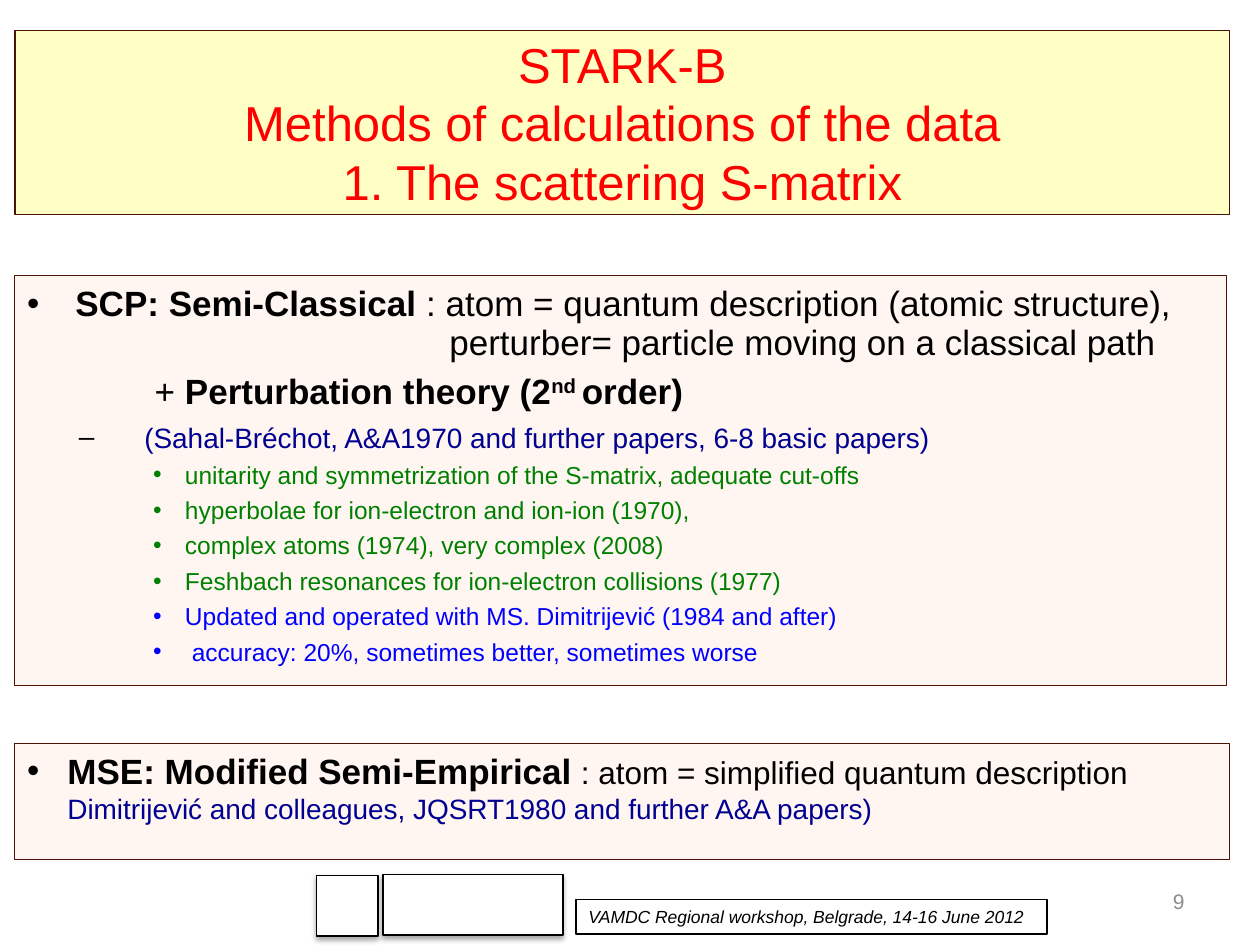
from copy import deepcopy

from lxml import etree
from pptx import Presentation
from pptx import util as u
from pptx.dml.color import RGBColor
from pptx.enum import shapes, text
from pptx.oxml import ns

COLORS = {
    "black": "000000", "white": "FFFFFF", "red": "FF0000", "navy": "000090",
    "green": "008000", "blue": "0000FF", "gray": "8C8C8C",
    "border": "4C1304", "yellow": "FFFFC5", "cream": "FFF6F2",
}
FONT = "Arial"


def rgb(name):
    return RGBColor.from_string(COLORS[name])


def paint(shape, fill, line):
    shape.fill.solid()
    shape.fill.fore_color.rgb = rgb(fill)
    shape.line.color.rgb = rgb(line)
    shape.line.width = u.Pt(0.75)


def place(shape, left, top, width, height):
    shape.left, shape.top = u.Cm(left), u.Cm(top)
    shape.width, shape.height = u.Cm(width), u.Cm(height)


def add_box(slide, place_at, fill, line):
    shape = slide.shapes.add_shape(
        shapes.MSO_SHAPE.RECTANGLE, *(u.Cm(length) for length in place_at))
    shape.shadow.inherit = False
    paint(shape, fill, line)
    shape.text_frame.vertical_anchor = text.MSO_ANCHOR.TOP
    return shape


def add_shadow(shape):
    effects = shape._element.spPr.find(ns.qn("a:effectLst"))
    shadow = etree.SubElement(
        effects, ns.qn("a:outerShdw"), blurRad=str(u.Pt(3.1)),
        dist=str(u.Pt(1.8)), dir="5400000", rotWithShape="0")
    color = etree.SubElement(shadow, ns.qn("a:srgbClr"), val=COLORS["black"])
    etree.SubElement(color, ns.qn("a:alpha"), val="35000")


def write(paragraph, words, size=20, color="black", bold=False, italic=False,
          superscript=False):
    """Append formatted text; a newline becomes a line break of the same size."""
    for index, line in enumerate(words.split("\n")):
        if index:
            paragraph.add_line_break()
            paragraph._p[-1].append(deepcopy(run._r.rPr))
        run = paragraph.add_run()
        run.text = line
        font = run.font
        font.name, font.size = FONT, u.Pt(size)
        font.bold, font.italic = bold, italic
        font.color.rgb = rgb(color)
        if superscript:
            run._r.rPr.set("baseline", "30000")


def add_paragraph(frame, margin=0, indent=0, bullet=None, color="black",
                  level=0, before=0):
    """Start a paragraph with its indents (cm) and optional bullet."""
    first = frame.paragraphs[0]
    paragraph = frame.add_paragraph() if first.runs else first
    paragraph.alignment = text.PP_ALIGN.LEFT
    paragraph.level = level
    properties = paragraph._p.get_or_add_pPr()
    properties.set("marL", str(u.Cm(margin)))
    properties.set("indent", str(u.Cm(indent)))
    if bullet:
        bullet_color = etree.SubElement(properties, ns.qn("a:buClr"))
        etree.SubElement(bullet_color, ns.qn("a:srgbClr"), val=COLORS[color])
        etree.SubElement(properties, ns.qn("a:buFont"), typeface=FONT)
        etree.SubElement(properties, ns.qn("a:buChar"), char=bullet)
    if before:
        paragraph.space_before = u.Pt(before)
    return paragraph


def format_title(title):
    place(title, 0.3, 0.61, 24.49, 3.71)
    paint(title, "yellow", "border")
    frame = title.text_frame
    frame.auto_size = text.MSO_AUTO_SIZE.NONE
    frame.vertical_anchor = text.MSO_ANCHOR.MIDDLE
    paragraph = frame.paragraphs[0]
    paragraph.alignment = text.PP_ALIGN.CENTER
    write(paragraph, "STARK-B\nMethods of calculations of the data\n"
          "1. The scattering S-matrix", size=28, color="red")


def add_semi_classical(slide):
    frame = add_box(slide, (0.3, 5.56, 24.43, 8.26), "cream", "border").text_frame
    paragraph = add_paragraph(frame, 0.97, -0.97, "•")
    write(paragraph, "SCP: Semi-Classical", bold=True)
    write(paragraph, " : atom = quantum description (atomic structure),")

    paragraph = add_paragraph(frame, 8.51, level=4, before=4.6)
    paragraph.line_spacing = 0.7
    write(paragraph, "perturber= particle moving on a classical path")

    paragraph = add_paragraph(frame, 2.57, before=4.6)
    write(paragraph, "+ ")
    write(paragraph, "Perturbation theory (2", bold=True)
    write(paragraph, "nd ", bold=True, superscript=True)
    write(paragraph, "order)", bold=True)

    paragraph = add_paragraph(frame, 2.36, -1.32, "–", level=1, before=5)
    write(paragraph, "(Sahal-Bréchot, A&A1970 and further papers, 6-8 basic papers)",
          size=16, color="navy")

    details = [
        ("unitarity and symmetrization of the S-matrix, adequate cut-offs", "green"),
        ("hyperbolae for ion-electron and ion-ion (1970),", "green"),
        ("complex atoms (1974), very complex (2008)", "green"),
        ("Feshbach resonances for ion-electron collisions (1977)", "green"),
        ("Updated and operated with MS. Dimitrijević (1984 and after)", "blue"),
        (" accuracy: 20%, sometimes better, sometimes worse", "blue"),
    ]
    for words, color in details:
        paragraph = add_paragraph(frame, 3.18, -0.64, "•", color, level=2, before=3.4)
        write(paragraph, words, size=14, color=color)


def add_semi_empirical(slide):
    frame = add_box(slide, (0.3, 14.99, 24.49, 2.34), "cream", "border").text_frame
    paragraph = add_paragraph(frame, 0.81, -0.81, "•")
    write(paragraph, "MSE: Modified Semi-Empirical", bold=True)
    write(paragraph, " : atom = simplified quantum description\n", size=18)
    write(paragraph, "Dimitrijević and colleagues, JQSRT1980 and further A&A papers)",
          size=16, color="navy")


def add_footer(slide):
    for place_at in ((6.38, 17.65, 1.24, 1.22), (7.72, 17.63, 3.63, 1.22)):
        add_shadow(add_box(slide, place_at, "white", "black"))

    frame = add_box(slide, (11.61, 18.14, 9.5, 0.69), "white", "black").text_frame
    frame.word_wrap = False
    write(add_paragraph(frame), "VAMDC Regional workshop, Belgrade, 14-16 June 2012",
          size=10, italic=True)

    number = slide.shapes.add_textbox(
        u.Cm(18.21), u.Cm(17.65), u.Cm(5.92), u.Cm(1.02))
    frame = number.text_frame
    frame.word_wrap = True
    frame.vertical_anchor = text.MSO_ANCHOR.MIDDLE
    paragraph = add_paragraph(frame)
    paragraph.alignment = text.PP_ALIGN.RIGHT
    write(paragraph, "9", size=12, color="gray")


def main():
    presentation = Presentation()
    presentation.slide_width, presentation.slide_height = u.Cm(25.4), u.Cm(19.05)
    slide = presentation.slides.add_slide(presentation.slide_layouts[5])
    add_footer(slide)
    format_title(slide.shapes.title)
    add_semi_classical(slide)
    add_semi_empirical(slide)
    presentation.save("out.pptx")


if __name__ == "__main__":
    main()
